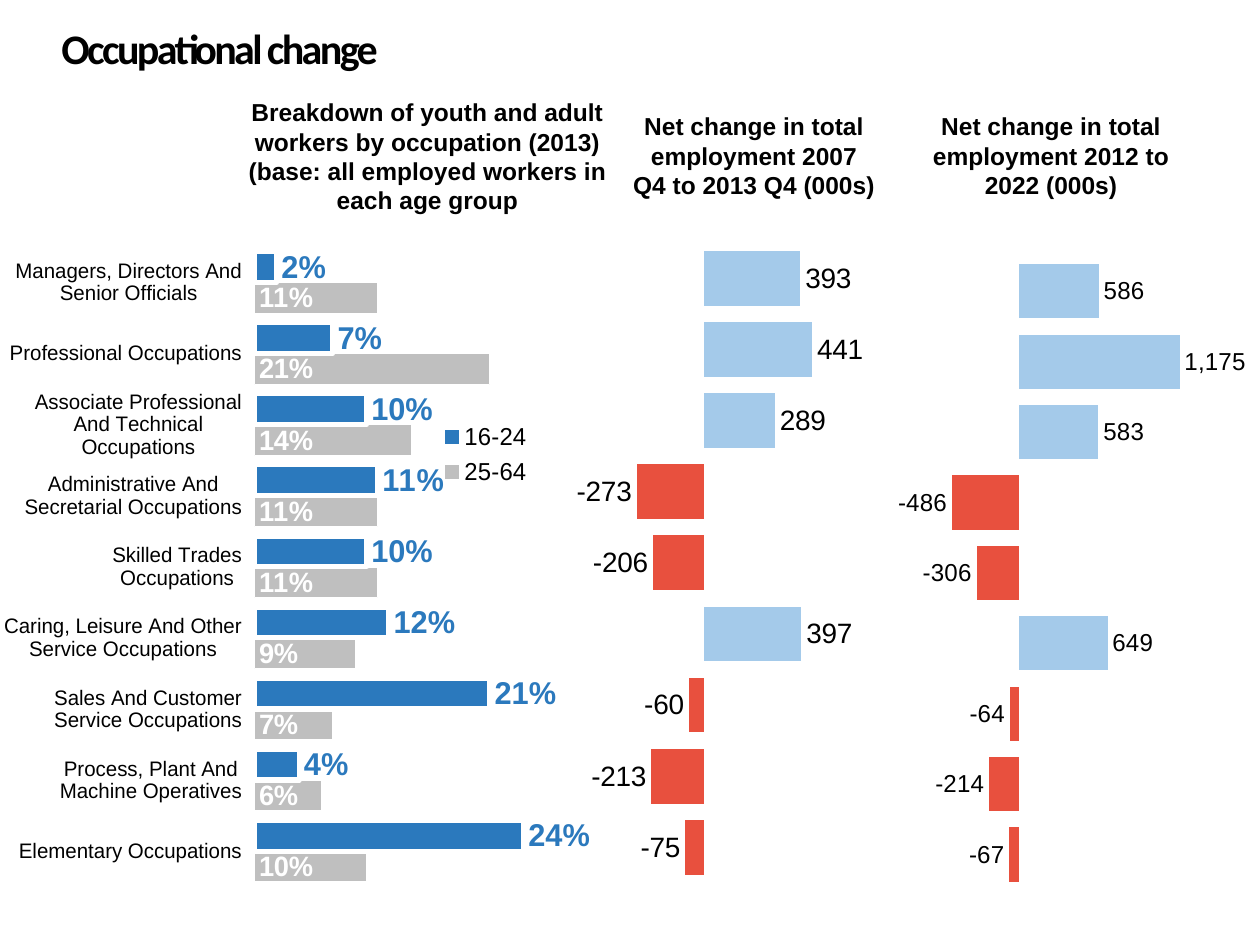
import pptx
import pptx.chart.data
import pptx.dml.color
import pptx.enum.chart
import pptx.enum.shapes
import pptx.enum.text
import pptx.oxml
import pptx.oxml.ns
import pptx.util

RGBColor = pptx.dml.color.RGBColor
BLACK = RGBColor(0x00, 0x00, 0x00)
WHITE = RGBColor(0xFF, 0xFF, 0xFF)
GREY = RGBColor(0xBF, 0xBF, 0xBF)
BLUE = RGBColor(0x2B, 0x79, 0xBD)
LIGHT_BLUE = RGBColor(0xA4, 0xCA, 0xEA)
RED = RGBColor(0xE8, 0x50, 0x3E)

EMU_PER_PX = 914400 / 126
LABEL = pptx.enum.chart.XL_LABEL_POSITION


def px(*lengths):
    return [pptx.util.Emu(round(n * EMU_PER_PX)) for n in lengths]


class Deck:
    """Holds the style and the current slide."""
    font = "Arial"
    title_font = "Calibri"

    def __init__(self, width, height):
        self.prs = pptx.Presentation()
        self.prs.slide_width, self.prs.slide_height = px(width, height)
        self.s = self.prs.slides.add_slide(self.prs.slide_layouts[6])

    def style(self, font, size, color=BLACK, bold=False, name=None):
        font.name = name or self.font
        font.size = pptx.util.Pt(size)
        font.bold = bold
        font.color.rgb = color

    def title(self, text, box):
        tf = self.s.shapes.add_textbox(*px(*box)).text_frame
        tf.word_wrap = True
        tf.auto_size = pptx.enum.text.MSO_AUTO_SIZE.SHAPE_TO_FIT_TEXT
        p = tf.paragraphs[0]
        r = p.add_run()
        r.text = text
        self.style(p.font, 24, bold=True, name=self.title_font)
        r.font._element.set("spc", "-150")  # tight letter spacing

    def heading(self, text, box):
        sp = self.s.shapes.add_shape(pptx.enum.shapes.MSO_SHAPE.RECTANGLE, *px(*box))
        sp.shadow.inherit = False
        sp.fill.solid()
        sp.fill.fore_color.rgb = WHITE
        sp.line.fill.background()
        tf = sp.text_frame
        tf.word_wrap = True
        tf.vertical_anchor = pptx.enum.text.MSO_ANCHOR.TOP
        p = tf.paragraphs[0]
        p.text = text
        p.alignment = pptx.enum.text.PP_ALIGN.CENTER
        self.style(p.font, 14, bold=True)

    def layout(self, parent, box, inner=False):
        """Place a plot area or legend by fractions of the chart."""
        for old in parent.findall(pptx.oxml.ns.qn("c:layout")):
            parent.remove(old)
        target = '<c:layoutTarget val="inner"/>' if inner else ""
        modes = "".join(f'<c:{k}Mode val="edge"/>' for k in "xy")
        sizes = "".join(f'<c:{k} val="{v}"/>' for k, v in zip("xywh", box))
        xml = (f'<c:layout {pptx.oxml.ns.nsdecls("c")}><c:manualLayout>'
               f'{target}{modes}{sizes}</c:manualLayout></c:layout>')
        parent.insert(0 if inner else 1, pptx.oxml.parse_xml(xml))

    def bar_chart(self, box, plot_box, cats, series, low, high, step, overlap=0):
        data = pptx.chart.data.CategoryChartData()
        data.categories = cats
        for name, values in series:
            data.add_series(name, values)
        kind = pptx.enum.chart.XL_CHART_TYPE.BAR_CLUSTERED
        chart = self.s.shapes.add_chart(kind, *px(*box), data).chart
        chart.has_title = False
        chart.has_legend = False
        self.style(chart.font, 10)
        plot = chart.plots[0]
        plot.vary_by_categories = False
        plot.gap_width, plot.overlap = 30, overlap
        axis = chart.value_axis
        axis.visible = False
        axis.has_major_gridlines = False
        axis.minimum_scale, axis.maximum_scale, axis.major_unit = low, high, step
        self.layout(chart._chartSpace.chart.plotArea, plot_box, inner=True)
        for ser in plot.series:
            ser.invert_if_negative = False
        return chart

    def paint(self, target, color):
        target.format.fill.solid()
        target.format.fill.fore_color.rgb = color

    def labels(self, ser, fmt, size, color=BLACK, bold=False, position=LABEL.OUTSIDE_END):
        dl = ser.data_labels
        dl.show_value = True
        dl.number_format, dl.number_format_is_linked = fmt, False
        dl.position = position
        self.style(dl.font, size, color, bold)

    def share_chart(self, box, plot_box, legend_box, cats, series):
        pairs = [(name, values) for name, values, *_ in series]
        chart = self.bar_chart(box, plot_box, cats, pairs, 0, 0.27, 0.05)
        chart.value_axis.tick_labels.number_format = "0%"
        chart.value_axis.tick_labels.number_format_is_linked = False
        chart.category_axis.format.line.fill.background()
        self.style(chart.category_axis.tick_labels.font, 12)
        for ser, (_, _, color, line, size, label_color, pos) in zip(chart.plots[0].series, series):
            self.paint(ser, color)
            ser.format.line.color.rgb = WHITE
            ser.format.line.width = pptx.util.Pt(line)
            self.labels(ser, "0%", size, label_color, True, pos)
        chart.has_legend = True
        chart.legend.position = pptx.enum.chart.XL_LEGEND_POSITION.RIGHT
        chart.legend.include_in_layout = False
        self.style(chart.legend.font, 14)
        self.layout(chart.legend._element, legend_box)

    def change_chart(self, box, plot_box, values, high, label_size):
        cats = [str(n + 1) for n in range(len(values))]
        chart = self.bar_chart(box, plot_box, cats, [("Series 1", values)], -500, high, 500, 100)
        chart.category_axis.visible = False
        ser = chart.plots[0].series[0]
        self.paint(ser, LIGHT_BLUE)
        for i, value in enumerate(values):
            if value < 0:
                self.paint(ser.points[i], RED)
        self.labels(ser, "#,##0", label_size)


OCCUPATIONS = [
    "Elementary Occupations",
    "Process, Plant And Machine Operatives",
    "Sales And Customer Service Occupations",
    "Caring, Leisure And Other Service Occupations",
    "Skilled Trades Occupations",
    "Administrative And Secretarial Occupations",
    "Associate Professional And Technical Occupations",
    "Professional Occupations",
    "Managers, Directors And Senior Officials",
]
AGE_GROUPS = [
    ("25-64", [0.1, 0.06, 0.07, 0.09, 0.11, 0.11, 0.14, 0.21, 0.11],
     GREY, 0.75, 16, WHITE, LABEL.INSIDE_BASE),
    ("16-24", [0.24, 0.04, 0.21, 0.12, 0.1, 0.11, 0.1, 0.07, 0.02],
     BLUE, 3, 18, BLUE, LABEL.OUTSIDE_END),
]
CHANGE_2007_2013 = [-75, -213, -60, 397, -206, -273, 289, 441, 393]
CHANGE_2012_2022 = [-67, -214, -64, 649, -306, -486, 583, 1175, 586]
HEADINGS = [
    ("Breakdown of youth and adult workers by occupation (2013) "
     "(base: all employed workers in each age group", (234, 91, 387, 136)),
    ("Net change in total employment 2007 Q4 to 2013 Q4 (000s)", (620, 105, 268, 87)),
    ("Net change in total employment 2012 to 2022 (000s)", (917, 105, 268, 106)),
]


def main():
    deck = Deck(1260, 945)

    # Charts
    deck.share_chart((4, 226, 586, 703), (0.42, 0.03, 0.53, 0.91),
                     (0.74, 0.27, 0.17, 0.11), OCCUPATIONS, AGE_GROUPS)
    deck.change_chart((571, 236, 328, 674), (0.03, 0.01, 0.75, 0.95),
                      CHANGE_2007_2013, 500, 16)
    deck.change_chart((898, 236, 348, 674), (0.14, 0.03, 0.8, 0.94),
                      CHANGE_2012_2022, 1500, 14)

    # Column headings and title
    for text, box in HEADINGS:
        deck.heading(text, box)
    deck.title("Occupational change", (49, 16, 1211, 63))

    deck.prs.save("out.pptx")


if __name__ == "__main__":
    main()
